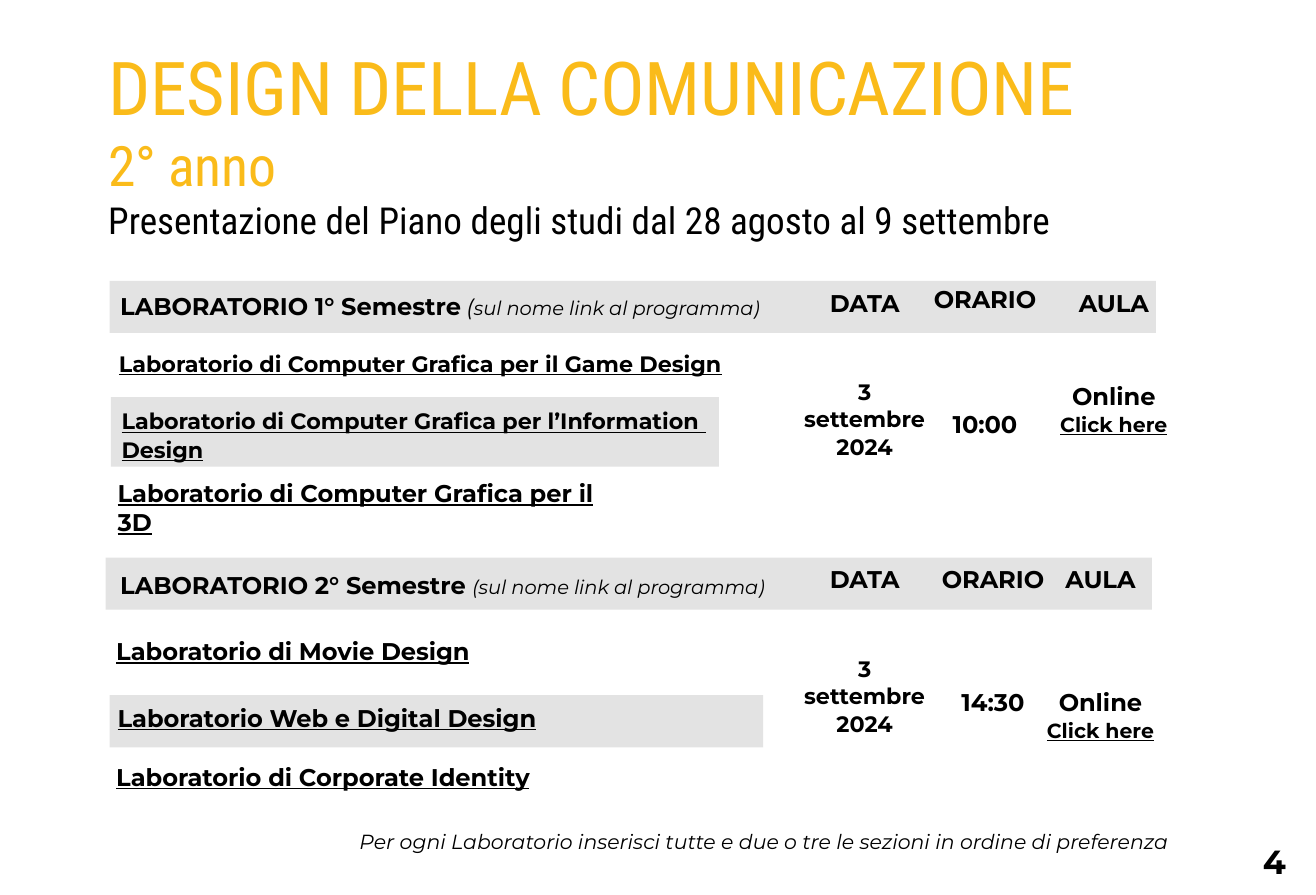
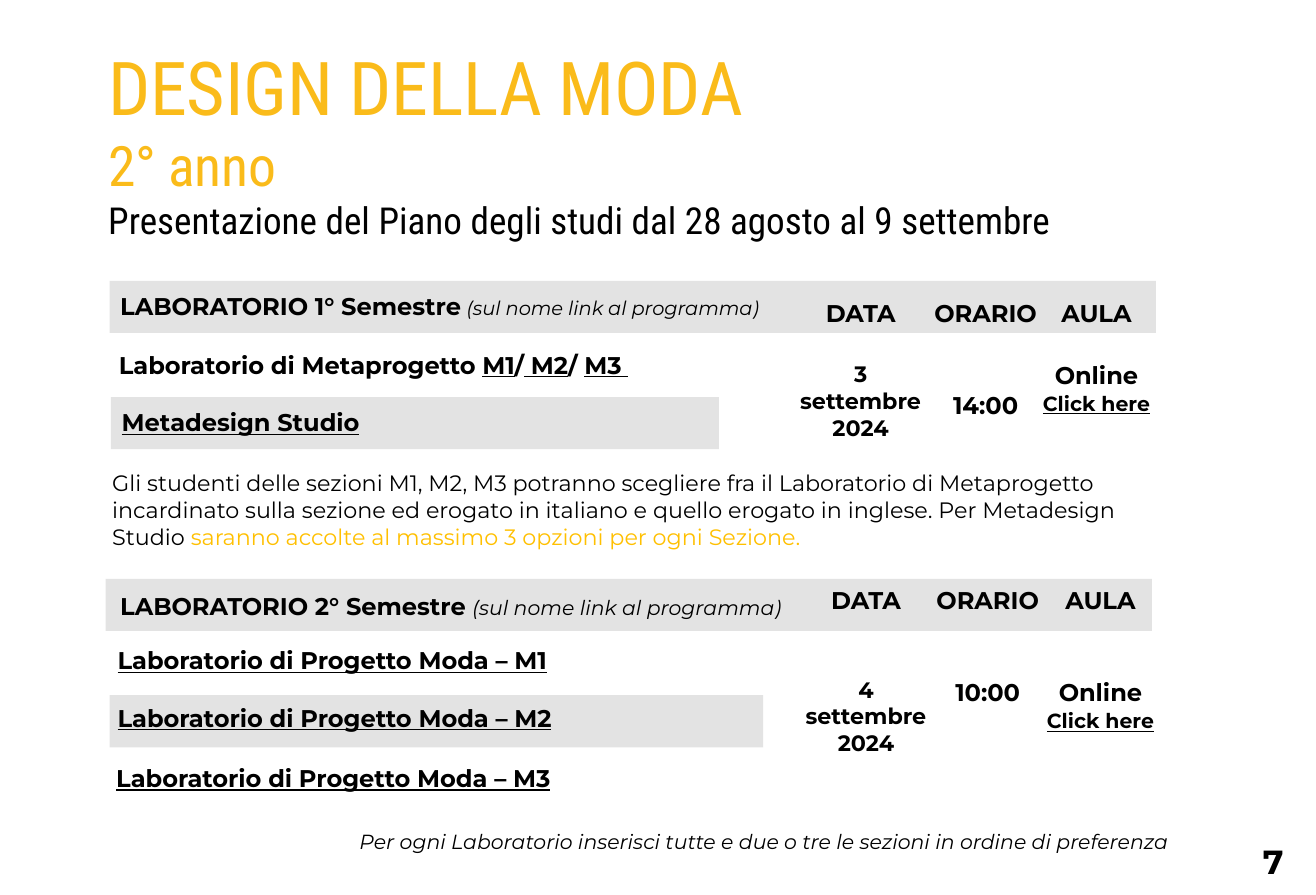
from collections import namedtuple
from copy import deepcopy
from pptx import Presentation
from pptx.dml.color import RGBColor
from pptx.enum.shapes import MSO_SHAPE
from pptx.enum.text import PP_ALIGN
from pptx.util import Inches, Pt

GOLD = RGBColor(0xFA, 0xBB, 0x1A)
AMBER = RGBColor(0xFF, 0xC0, 0x00)
BLACK = RGBColor(0, 0, 0)
GREY = RGBColor(0xE3, 0xE3, 0xE3)

Style = namedtuple("Style", "size bold italic under color face track",
                   defaults=(False, False, False, BLACK, "Montserrat", 0))
HEAD = Style(13, bold=True)
LINK = HEAD._replace(under=True)
SMALL = LINK._replace(size=12)
DATE = HEAD._replace(size=12)
CLICK = LINK._replace(size=11)
BODY = Style(12)
NOTE = Style(10.5, italic=True)
TITLE = Style(40, color=GOLD, face="Roboto Condensed", track=-10)
YEAR = TITLE._replace(size=30)
LEAD = TITLE._replace(size=20, color=BLACK, track=0)

PLAN = "Presentazione del Piano degli studi dal 28 agosto al 9 settembre"
HINT = " (sul nome link al programma)"
ORDER = ("Per ogni Laboratorio inserisci tutte e due o tre le sezioni "
         "in ordine di preferenza")


class Deck:
    def __init__(self, file):
        self.file = file
        self.slide = None

    def page(self, title, number):
        self.slide = self.file.slides.add_slide(self.file.slide_layouts[6])
        self.text(0.8, 0.29, 8.1, 1.53, [
            [(title + "\n", TITLE), ("2° anno\n", YEAR), (PLAN, LEAD)]])
        self.text(1.26, 6.18, 7.49, 0.2,
                  [[(ORDER, NOTE._replace(size=11))]], PP_ALIGN.RIGHT)
        self.text(9.44, 6.27, 0.23, 0.32,
                  [[(number, HEAD._replace(size=18))]], gaps=(2.4,))

    def font(self, font, style):
        font.size = Pt(style.size)
        font.bold = style.bold
        font.italic = style.italic
        font.underline = style.under
        font.color.rgb = style.color
        font.name = style.face

    def run(self, para, words, style):
        run = para.add_run()
        run.text = words.rstrip("\n")
        self.font(run.font, style)
        props = run._r.get_or_add_rPr()
        if style.track:
            props.set("spc", str(style.track))
        if words.endswith("\n"):
            para.add_line_break()
            para._p[-1].append(deepcopy(props))

    def text(self, x, y, w, h, paras, align=PP_ALIGN.LEFT, gaps=()):
        box = self.slide.shapes.add_textbox(
            Inches(x), Inches(y), Inches(w), Inches(h))
        frame = box.text_frame
        frame.word_wrap = True
        frame.margin_left = Inches(0.01)
        frame.margin_top = Inches(0.02)
        frame.margin_right = frame.margin_bottom = 0
        for i, runs in enumerate(paras):
            para = frame.paragraphs[0] if i == 0 else frame.add_paragraph()
            para.alignment = align
            para.space_before = Pt(gaps[i] if i < len(gaps) else 1)
            if len(runs) == 1:
                words, style = runs[0]
                self.font(para.font, style)
                para.add_run().text = words
            else:
                for words, style in runs:
                    self.run(para, words, style)

    def band(self, x, y, w, h=0.39):
        bar = self.slide.shapes.add_shape(
            MSO_SHAPE.RECTANGLE, Inches(x), Inches(y), Inches(w), Inches(h))
        bar.shadow.inherit = False
        bar.fill.solid()
        bar.fill.fore_color.rgb = GREY
        bar.line.fill.background()

    def term(self, x, y, number, lead, cut=1, size=10.5):
        self.band(x, y, 7.83)
        self.text(0.89, y + 0.06, 5.03, 0.24, [[
            (f"LABORATORIO {number}° Semestre", HEAD),
            (HINT[:cut], NOTE._replace(size=lead)),
            (HINT[cut:], NOTE._replace(size=size))]])

    def row(self, x, y, words, style=LINK, w=5.42):
        self.text(x, y, w, 0.23, [[(words, style)]])

    def column(self, x, y, w, head, gap, *lines):
        self.text(x, y, w, 1.4, [[(head, HEAD)]] + [[line] for line in lines],
                  PP_ALIGN.CENTER, (1, gap))

    def date(self, x, y, gap, *lines):
        self.column(x, y, 1.01, "DATA", gap, *[(s, DATE) for s in lines])

    def time(self, x, y, w, gap, hour):
        self.column(x, y, w, "ORARIO", gap, (hour, HEAD))

    def room(self, x, y, gap):
        self.column(x, y, 0.94, "AULA", gap,
                    ("Online", HEAD), ("Click here", CLICK))


def media(deck):
    deck.page("DESIGN DELLA COMUNICAZIONE", "4")
    deck.term(0.82, 2.1, 1, 12, cut=2)
    deck.band(0.83, 2.97, 4.55, 0.52)
    deck.row(0.88, 2.6, "Laboratorio di Computer Grafica per il Game Design",
             SMALL, 4.65)
    deck.text(0.9, 3.03, 5.03, 0.43, [
        [("Laboratorio di Computer Grafica per l’Information ", SMALL)],
        [("Design", SMALL)]])
    deck.row(0.87, 3.56, "Laboratorio di Computer Grafica per il 3D", w=3.72)
    deck.date(5.96, 2.14, 32.5, "3 settembre", "2024")
    deck.time(6.97, 2.11, 0.79, 51.5, "10:00")
    deck.room(7.86, 2.14, 34)

    deck.term(0.79, 4.17, 2, 14)
    deck.band(0.82, 5.2, 4.89)
    deck.row(0.86, 4.74, "Laboratorio di Movie Design")
    deck.row(0.87, 5.24, "Laboratorio Web e Digital Design")
    deck.row(0.86, 5.68, "Laboratorio di Corporate Identity")
    deck.date(5.96, 4.2, 33.5, "3 settembre", "2024")
    deck.time(6.99, 4.2, 0.87, 50.5, "14:30")
    deck.room(7.76, 4.2, 50.5)


def moda(deck):
    deck.page("DESIGN DELLA MODA", "7")
    deck.term(0.82, 2.1, 1, 12)
    deck.band(0.83, 2.97, 4.55)
    deck.text(0.88, 2.6, 4.04, 0.23, [[
        ("Laboratorio di Metaprogetto ", HEAD), ("M1", LINK), ("/", HEAD),
        (" M2", LINK), ("/ ", HEAD), ("M3 ", LINK)]])
    deck.row(0.9, 3.03, "Metadesign Studio")
    deck.date(5.93, 2.21, 17.9, "3 settembre 2024")
    deck.time(6.96, 2.21, 0.82, 34, "14:00")
    deck.room(7.73, 2.21, 17.9)
    deck.text(0.83, 3.49, 8.11, 0.62, [[
        ("Gli studenti delle sezioni M1, M2, M3 potranno scegliere fra il "
         "Laboratorio di Metaprogetto incardinato sulla sezione ed erogato "
         "in italiano e quello erogato in inglese. Per Metadesign Studio ",
         BODY),
        ("saranno accolte al massimo 3 opzioni per ogni Sezione.",
         BODY._replace(color=AMBER))]])

    deck.term(0.79, 4.33, 2, 14, size=11)
    deck.band(0.82, 5.2, 4.89)
    for i, (x, y) in enumerate([(0.87, 4.81), (0.87, 5.24), (0.86, 5.69)], 1):
        deck.row(x, y, f"Laboratorio di Progetto Moda – M{i}")
    deck.date(5.97, 4.36, 33, "4 settembre 2024")
    deck.time(6.99, 4.36, 0.79, 34, "10:00")
    deck.room(7.76, 4.36, 34)


def main():
    file = Presentation()
    file.slide_width = Pt(709)
    file.slide_height = Pt(482)
    deck = Deck(file)
    media(deck)
    moda(deck)
    file.save("out.pptx")


if __name__ == "__main__":
    main()
